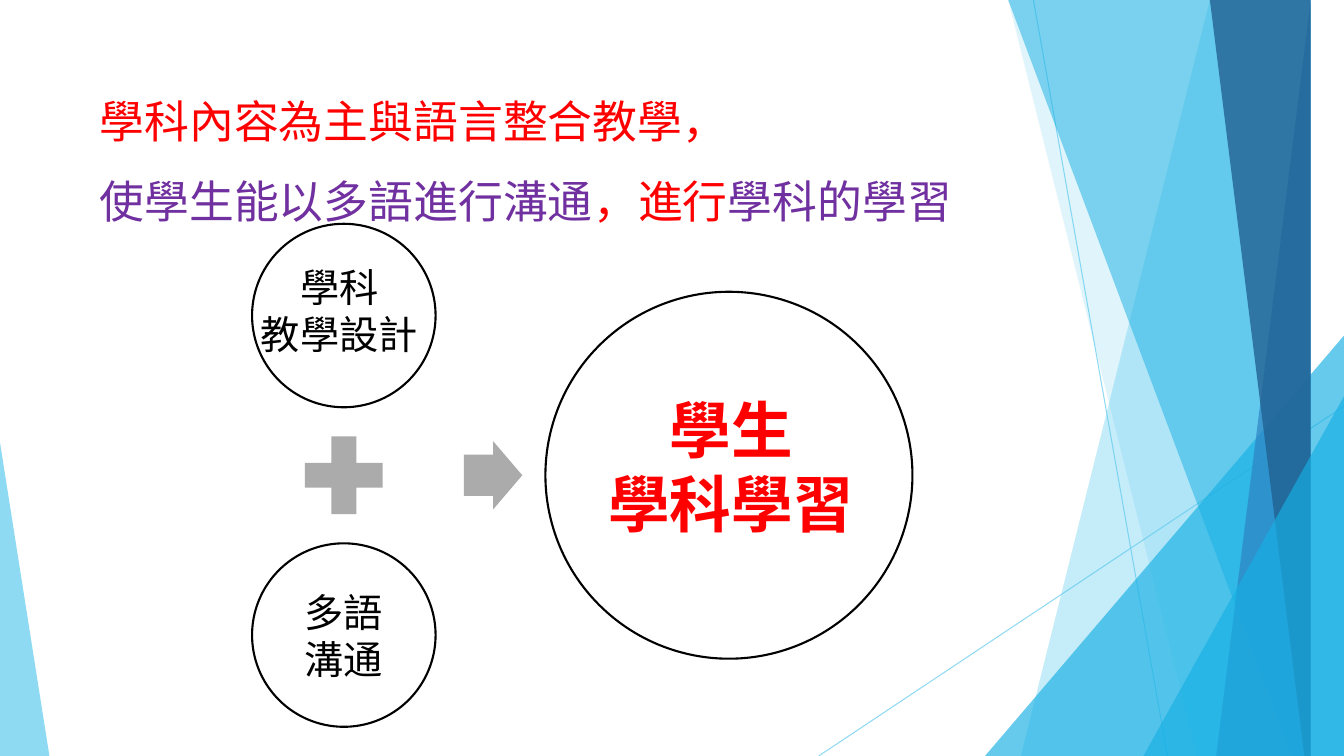
import pptx
import pptx.util
import pptx.dml.color
import pptx.enum.shapes
import pptx.enum.text
import pptx.oxml.ns
from lxml import etree

Inches = pptx.util.Inches
Pt = pptx.util.Pt
SHAPE = pptx.enum.shapes.MSO_SHAPE
ALIGN = pptx.enum.text.PP_ALIGN
qn = pptx.oxml.ns.qn

WIDTH, HEIGHT = 13.33, 7.5
RED, PURPLE, BLACK, GREY = "FF0000", "7030A0", "000000", "ABABAB"
SKY, AZURE, BLUE, NAVY = "5FCBEF", "17B0E4", "2E83C3", "226292"


def rgb(color):
    return pptx.dml.color.RGBColor.from_string(color)


def set_alpha(parent, opacity):
    """Set the opacity, in percent, of the solid fill below parent."""
    for clr in parent.iter(qn("a:srgbClr")):
        etree.SubElement(clr, qn("a:alpha")).set("val", str(opacity * 1000))


def paint(sp, color, opacity=100, outline=None):
    sp.shadow.inherit = False
    sp.fill.solid()
    sp.fill.fore_color.rgb = rgb(color)
    if opacity < 100:
        set_alpha(sp.fill._xPr, opacity)
    if outline:
        sp.line.color.rgb = rgb(outline)
        sp.line.width = Pt(1.5)
    else:
        sp.line.fill.background()


def add_preset(s, kind, box, color, opacity=100, outline=None, adj=()):
    sp = s.shapes.add_shape(kind, *map(Inches, box))
    for i, value in enumerate(adj):
        sp.adjustments[i] = value
    paint(sp, color, opacity, outline)


def add_ray(s, start, end):
    sp = s.shapes.add_connector(pptx.enum.shapes.MSO_CONNECTOR.STRAIGHT,
                                *map(Inches, start + end))
    sp.line.color.rgb = rgb(SKY)
    sp.line.width = Pt(0.75)
    spPr = sp._element.spPr
    set_alpha(spPr, 70)
    etree.SubElement(spPr, qn("a:effectLst"))


def add_text(s, box, lines, size=28, font="Karla", bold=False, color=BLACK,
             align=ALIGN.CENTER, spacing=None):
    """Each line is a string, or a list of (text, color) pairs."""
    tf = s.shapes.add_textbox(*map(Inches, box)).text_frame
    tf.word_wrap = True
    tf.auto_size = pptx.enum.text.MSO_AUTO_SIZE.SHAPE_TO_FIT_TEXT
    for i, line in enumerate(lines):
        p = tf.add_paragraph() if i else tf.paragraphs[0]
        p.alignment = align
        if spacing:
            p.line_spacing = spacing
        for text, run_color in [(line, color)] if isinstance(line, str) else line:
            r = p.add_run()
            r.text = text
            r.font.size = Pt(size)
            r.font.bold = bold
            r.font.name = font
            r.font.color.rgb = rgb(run_color)
            etree.SubElement(r._r.get_or_add_rPr(), qn("a:ea")).set("typeface", font)


def add_facets(s, x, y, w, h):
    """Translucent blue facets along the right edge and at the lower left."""
    right, bottom = x + w, y + h

    def band(top_x, bottom_x, color, opacity):
        top = y - 0.01
        fb = s.shapes.build_freeform(x + top_x, top, scale=Inches(1))
        fb.add_line_segments([(right, top), (right, bottom), (x + bottom_x, bottom)])
        paint(fb.convert_to_shape(), color, opacity)

    def corner(tw, th, color, opacity, left=False):
        box = (x if left else right - tw, bottom - th, tw, th)
        add_preset(s, SHAPE.ISOSCELES_TRIANGLE, box, color, opacity,
                   adj=[0 if left else 1])

    add_ray(s, (x + 10.25, y), (x + 11.58, bottom))
    add_ray(s, (right, y + 4.03), (x + 8.12, bottom))
    band(12.28, 10.04, SKY, 36)
    band(10.5, 11.83, SKY, 20)
    corner(3.56, 4.17, AZURE, 66)
    band(10.21, 12.91, AZURE, 50)
    band(13.03, 11.92, BLUE, 70)
    band(11.96, 13.18, NAVY, 80)
    corner(1.99, 3.57, AZURE, 66)
    corner(0.49, 3.11, SKY, 70, left=True)


def add_heading(s, x, y, w, h):
    add_text(s, (x, y, w, h), [
        [("學科內容為主與語言整合教學，", RED)],
        [("使學生能以多語進行溝通", PURPLE), ("，進行", RED), ("學科的學習", PURPLE)],
    ], size=32, font="Noto Sans CJK SC", align=ALIGN.JUSTIFY, spacing=1.5)


def add_equation(s, x, y, w, h):
    """Two small circles, added together, lead to one large circle."""
    small, large, plus = 1.82, 3.64, 1.05
    middle = y + h / 2

    def circle(left, top, size):
        add_preset(s, SHAPE.OVAL, (left, top, size, size), "FFFFFF", outline=BLACK)

    circle(x, y, small)
    add_preset(s, SHAPE.MATH_PLUS,
               (x + (small - plus) / 2, middle - plus / 2, plus, plus), GREY)
    circle(x, y + h - small, small)
    add_preset(s, SHAPE.RIGHT_ARROW, (x + 2.1, middle - 0.34, 0.58, 0.68), GREY,
               adj=[0.6, 0.5])
    circle(x + w - large, middle - large / 2, large)

    add_text(s, (x - 0.45, y + 0.34, 2.63, 1.04), ["學科", "教學設計"])
    add_text(s, (x + 0.42, y + 3.57, 1.13, 1.04), ["多語", "溝通"], align=ALIGN.LEFT)
    add_text(s, (x + 3.41, y + 1.62, 2.69, 1.58), ["學生", "學科學習"],
             size=44, bold=True, color=RED)


def main():
    prs = pptx.Presentation()
    prs.slide_width, prs.slide_height = Inches(WIDTH), Inches(HEIGHT)
    s = prs.slides.add_slide(prs.slide_layouts[6])
    add_facets(s, 0, 0, WIDTH, HEIGHT)
    add_heading(s, 0.89, 0.61, 8.68, 1.72)
    add_equation(s, 2.5, 2.22, 6.55, 4.99)
    prs.save("out.pptx")


if __name__ == "__main__":
    main()
